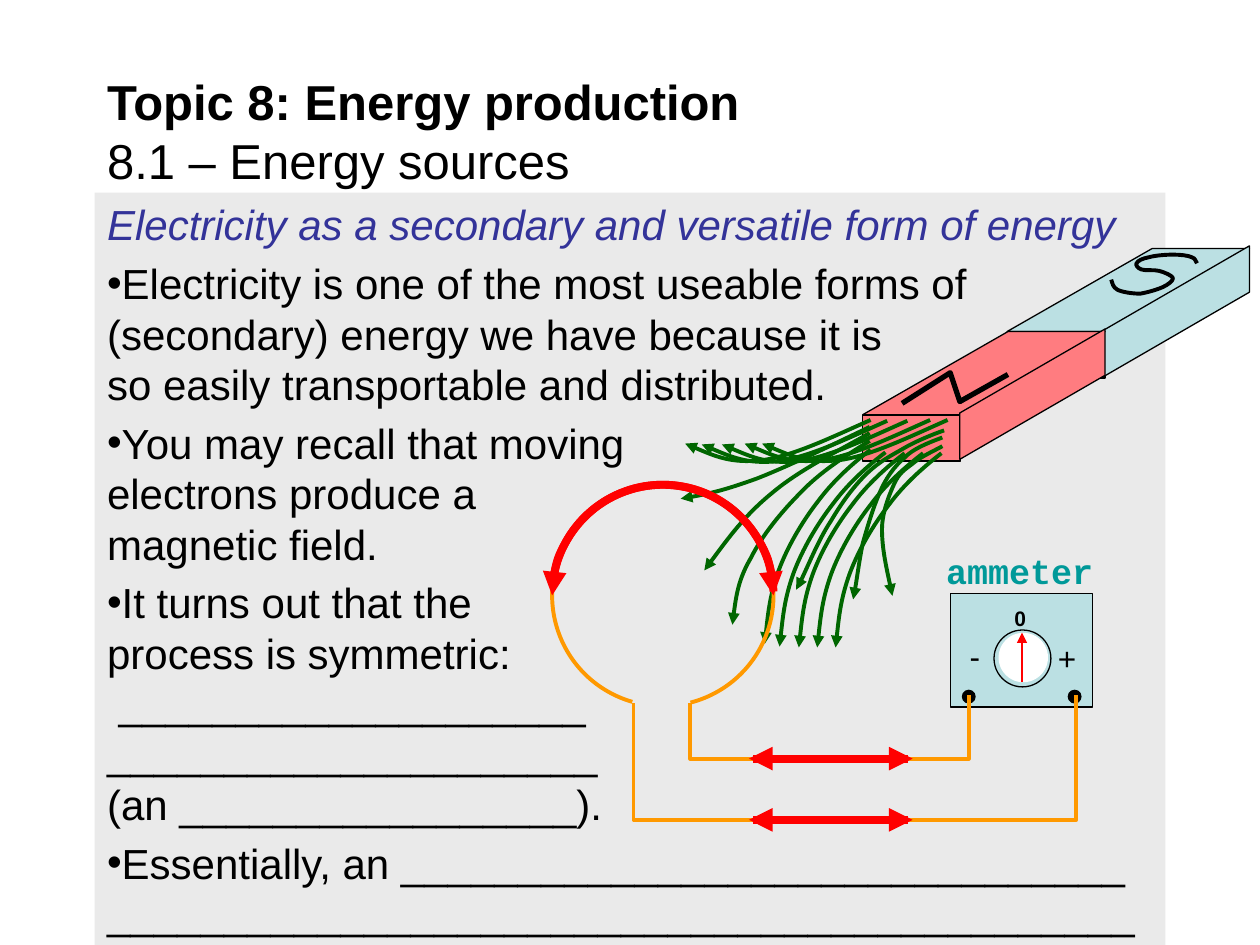
from lxml import etree
from pptx import Presentation
from pptx.dml import color
from pptx.enum import shapes, text
from pptx.oxml import ns
from pptx.util import Pt

BLACK, BLUE, RED, ORANGE, GREEN = "000000", "BBE0E3", "FF0000", "FF9900", "006600"
TITLE = "Topic 8: Energy production\v8.1 – Energy sources"
HEADING = "Electricity as a secondary and versatile form of energy"
BULLETS = [
    "Electricity is one of the most useable forms of\v(secondary) energy we have because it is\v"
    "so easily transportable and distributed.",
    "You may recall that moving\velectrons produce a\vmagnetic field.",
    "It turns out that the\vprocess is symmetric:\v ____________________\v"
    "_____________________\v(an _________________).",
    "Essentially, an _______________________________\v"
    "____________________________________________",
]
LETTER_N = [(515.5, 230.5), (543, 213), (548.5, 229.5), (576, 214)]
LETTER_S = [
    (684, 150.5), (683.3, 149.8), (683.3, 147.6), (681, 147), (679, 146), (674.5, 145.5),
    (670.3, 145.5), (666, 145.5), (660, 146), (656.6, 147), (653, 147.6), (650, 149),
    (649.5, 150.5), (648.7, 151), (650, 153.4), (652.3, 154), (654.5, 154.8), (659.5, 154),
    (662.4, 154.8), (665.3, 155.5), (670.3, 157.7), (670.3, 159), (670.3, 160.5),
    (667.4, 162.7), (664.6, 164), (661, 165.6), (656, 167), (651.6, 167.8), (647.3, 167.8),
    (641.5, 167), (638.6, 165.6), (635.8, 164), (635.8, 162), (635, 159.8)]
SWEEP = [(497.5, 240), (475, 250), (453.5, 260.5), (435.5, 263), (417.5, 265), (404.5, 259),
         (391.5, 253.5)]
SWEEP_SHIFTS = [(0, 0), (9.5, 0.5), (21, 0.5), (34, 0), (44, 0)]
DROP = [(497.5, 257), (486.5, 265.5), (476, 275), (467.5, 286.5), (458.5, 298), (450, 312.5),
        (445, 326), (440, 340), (438.5, 354), (437, 368)]
DROP_SHIFTS = [(0, 0), (8.5, 1.5), (19.5, 2), (30, 2), (40.5, 2)]
SINGLE_FIELD_LINES = [
    [(497, 252), (483, 260.5), (468.5, 270), (458, 281), (446.5, 292.5), (435.5, 306),
     (429, 319), (422, 331), (420, 344), (418.5, 357)],
    [(497, 247.5), (477.5, 258.5), (457, 268.5), (441.5, 281.5), (425.5, 294.5), (414, 310.5),
     (402.5, 326)],
    [(497, 244), (474, 255), (450.5, 266.5), (432.5, 273.5), (414.5, 280), (402, 283),
     (389, 285)],
    [(538.5, 255), (532, 258.5), (525.5, 261.5), (521.5, 265), (517, 268.5), (514, 270),
     (511, 276.5), (508.5, 282), (504, 292.5), (504, 302.5), (504, 313), (507, 327),
     (510, 340.5)],
    [(538.5, 250), (535, 251.5), (522.5, 255.5), (517, 261.5), (511, 266.5), (506, 273.5),
     (502.5, 282), (499, 290), (496, 300), (493, 310.5), (491, 320.5), (489, 336), (487.5, 342.5)],
    [(539.5, 246), (535, 247.5), (523.5, 252), (516, 256.5), (509, 260.5), (502, 264),
     (494.5, 271.5), (488, 278), (481.5, 286.5), (475, 297.5), (468, 308), (459.5, 329),
     (455, 337)],
]


def rgb(value):
    return color.RGBColor.from_string(value)


def points(*lengths):
    return [Pt(length) for length in lengths]


def place(box, left, top, width, height):
    box.left, box.top, box.width, box.height = points(left, top, width, height)


def style_font(paragraph, size, colour, name="Arial", bold=False, italic=False):
    for span in paragraph.runs:
        font = span.font
        font.name, font.size, font.bold, font.italic = name, Pt(size), bold, italic
        font.color.rgb = rgb(colour)


def style_line(shape, colour, width, arrow=None):
    shape.line.color.rgb = rgb(colour)
    shape.line.width = Pt(width)
    if arrow:
        line = shape.line._get_or_add_ln()
        etree.SubElement(line, ns.qn("a:" + arrow), type="triangle")


def style_shape(shape, fill, colour, width, arrow=None):
    shape.shadow.inherit = False
    if fill:
        shape.fill.solid()
        shape.fill.fore_color.rgb = rgb(fill)
    else:
        shape.fill.background()
    style_line(shape, colour, width, arrow)


def add_preset(page, kind, bounds, fill=None, colour=BLACK, width=0.75, arrow=None):
    shape = page.shapes.add_shape(kind, *points(*bounds))
    style_shape(shape, fill, colour, width, arrow)
    return shape


def add_arc(page, bounds, start, end, colour, width, arrow=None):
    arc = add_preset(page, shapes.MSO_SHAPE.ARC, bounds, None, colour, width, arrow)
    arc.adjustments[0], arc.adjustments[1] = start * 0.6, end * 0.6


def add_outline(page, vertices, fill=None, colour=BLACK, width=0.75, arrow=None):
    start, *rest = [tuple(points(*vertex)) for vertex in vertices]
    builder = page.shapes.build_freeform(*start)
    builder.add_line_segments(rest, close=bool(fill))
    outline = builder.convert_to_shape()
    style_shape(outline, fill, colour, width, arrow)
    return outline


def add_curve(page, vertices, colour, width, arrow=None):
    curve = add_outline(page, vertices, None, colour, width, arrow)
    segments = list(curve._element.iter(ns.qn("a:lnTo")))
    for first in range(0, len(segments), 3):
        bezier = etree.Element(ns.qn("a:cubicBezTo"))
        segments[first].addprevious(bezier)
        for segment in segments[first:first + 3]:
            bezier.append(segment[0])
            segment.getparent().remove(segment)


def add_line(page, start, end, width, arrow):
    line = page.shapes.add_connector(shapes.MSO_CONNECTOR.STRAIGHT, *points(*start, *end))
    style_line(line, RED, width, arrow)
    etree.SubElement(line._element.spPr, ns.qn("a:effectLst"))


def add_label(page, words, bounds, size, colour=BLACK, name="Arial", bold=False):
    box = page.shapes.add_textbox(*points(*bounds))
    box.text_frame.text = words
    style_font(box.text_frame.paragraphs[0], size, colour, name, bold)


def fill_title(page):
    title = page.shapes.title
    place(title, 54, 42, 612, 65.5)
    frame = title.text_frame
    frame.text = TITLE
    frame.auto_size = text.MSO_AUTO_SIZE.NONE
    frame.vertical_anchor = text.MSO_ANCHOR.MIDDLE
    paragraph = frame.paragraphs[0]
    paragraph.alignment = text.PP_ALIGN.LEFT
    style_font(paragraph, 28, BLACK)
    paragraph.runs[0].font.bold = True


def fill_body(page):
    body = page.placeholders[1]
    place(body, 54, 110, 612, 430)
    body.fill.solid()
    body.fill.fore_color.rgb = rgb("EAEAEA")
    frame = body.text_frame
    frame.text = "\n".join([HEADING, *BULLETS])
    frame.auto_size = text.MSO_AUTO_SIZE.NONE
    for index, paragraph in enumerate(frame.paragraphs):
        paragraph.space_before = Pt(4.8)
        paragraph.line_spacing = Pt(28.8)
        style_font(paragraph, 24, BLACK if index else "333399", italic=index == 0)
        layout = paragraph._p.get_or_add_pPr()
        layout.set("marL", "0")
        layout.set("indent", "0")
        if index:
            etree.SubElement(layout, ns.qn("a:buChar"), char="•")
        else:
            etree.SubElement(layout, ns.qn("a:buNone"))


def draw_ammeter(page):
    oval = shapes.MSO_SHAPE.OVAL
    add_preset(page, shapes.MSO_SHAPE.RECTANGLE, (543, 339, 81.5, 65), BLUE)
    add_preset(page, oval, (568, 360, 32.5, 32.5))
    add_label(page, "-", (547, 360.5, 22.5, 29), 18)
    add_label(page, "0", (572.5, 342.5, 30, 21.5), 12, bold=True)
    add_label(page, "+", (597.5, 361.5, 22.5, 29), 18)
    for left in (550, 610.5):
        add_preset(page, oval, (left, 394.5, 7.2, 7.2), BLACK)
    add_preset(page, oval, (571, 362, 27.5, 27.5), "FFFFFF", "FFFFFF")


def draw_magnet_half(page, left, top, fill):
    right, bottom, reach, rise = left + 55.5, top + 26, 83, 48
    add_preset(page, shapes.MSO_SHAPE.RECTANGLE, (left, top, 56, 26), fill)
    add_outline(page, [(left, top - 0.5), (left + reach, top - rise),
                       (right + reach, top - rise), (right, top - 0.5)], fill)
    add_outline(page, [(right, bottom - 1), (right, top - 1.5),
                       (right + reach, top - rise - 1.5), (right + reach, bottom - rise - 1)], fill)


def draw_magnet(page):
    draw_magnet_half(page, 575.5, 190, BLUE)
    draw_magnet_half(page, 493, 237.5, "FF7C80")
    add_outline(page, LETTER_N, width=3)
    add_curve(page, LETTER_S, BLACK, 2.25)
    field_lines = list(SINGLE_FIELD_LINES)
    for base, shifts in ((SWEEP, SWEEP_SHIFTS), (DROP, DROP_SHIFTS)):
        field_lines += [[(x + dx, y + dy) for x, y in base] for dx, dy in shifts]
    for vertices in field_lines:
        add_curve(page, vertices, GREEN, 2.25, "tailEnd")


def draw_circuit(page):
    loop = (315.5, 277, 126.5, 126.5)
    add_arc(page, loop, 106, 75.5, ORANGE, 2.25)
    for left, right, bottom in ((362, 615, 468.5), (394.5, 553.5, 433.5)):
        add_outline(page, [(left, 402), (left, bottom), (right, bottom), (right, 397)],
                    colour=ORANGE, width=2.25)
    add_arc(page, loop, 190, 0, RED, 4.5, "tailEnd")
    add_arc(page, loop, 180, 358, RED, 4.5, "headEnd")
    for y in (433.5, 468.5):
        add_line(page, (430.5, y), (521.5, y), 4.5, "tailEnd")
        add_line(page, (428, y), (519, y), 4.5, "headEnd")


def main():
    deck = Presentation()
    deck.slide_width, deck.slide_height = points(720, 540)
    page = deck.slides.add_slide(deck.slide_layouts[1])
    fill_body(page)
    fill_title(page)
    draw_ammeter(page)
    draw_magnet(page)
    draw_circuit(page)
    add_label(page, "ammeter", (533.5, 310.5, 98.5, 31), 20, "009999", "Courier New", True)
    add_line(page, (584, 389.5), (584, 361.5), 1.5, "tailEnd")
    deck.save("out.pptx")


if __name__ == "__main__":
    main()
